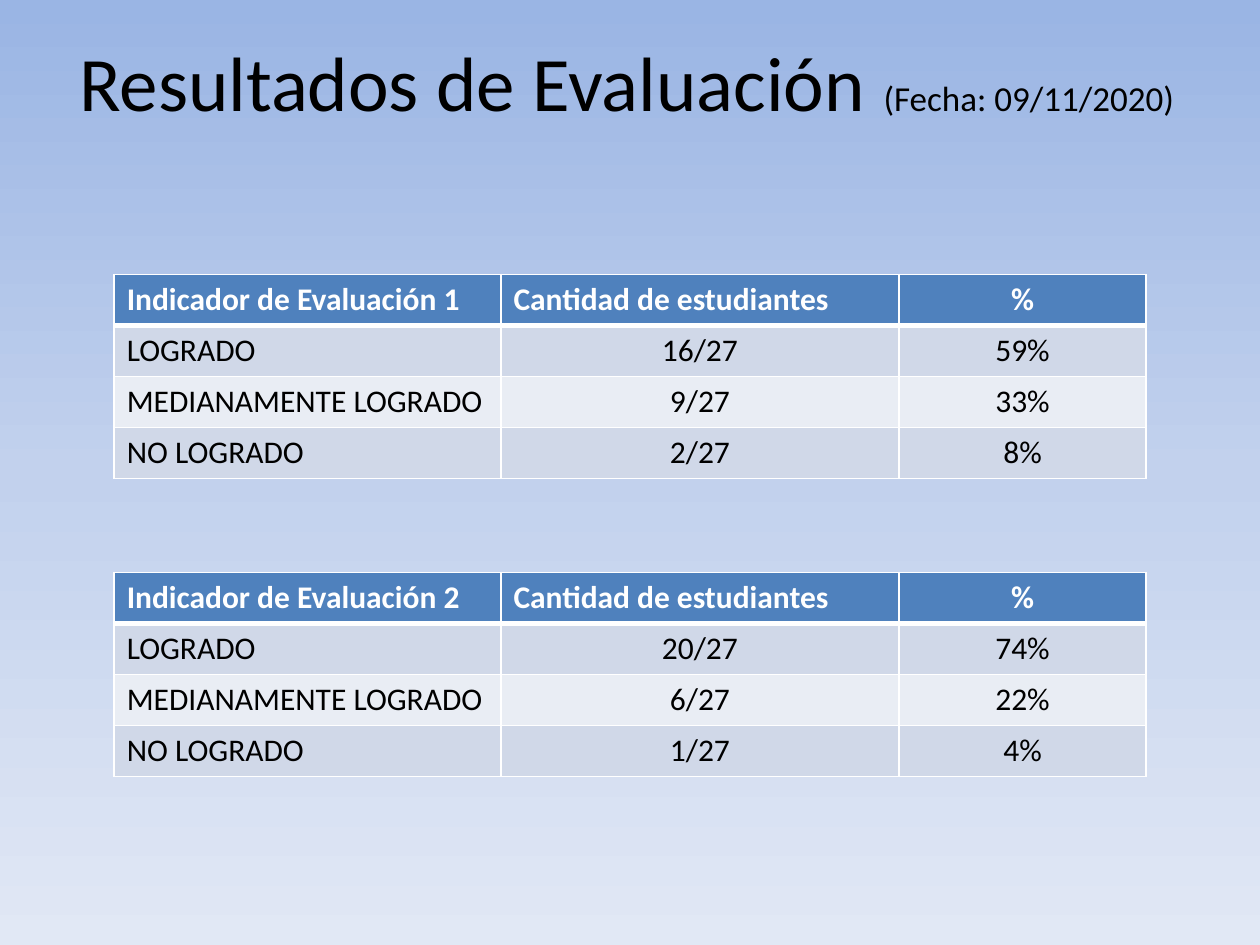
from dataclasses import dataclass

from lxml.etree import SubElement
from pptx import Presentation
from pptx.dml.color import RGBColor as Color
from pptx.enum.text import MSO_ANCHOR as Anchor, PP_ALIGN as Align
from pptx.oxml.ns import qn
from pptx.util import Pt


@dataclass(frozen=True)
class Theme:
    font: str = "Calibri"
    background: tuple = ((0, "9AB5E4"), (50, "C2D1ED"), (100, "E1E8F5"))
    text: str = "000000"
    light: str = "FFFFFF"
    header: str = "4F81BD"
    bands: tuple = ("D0D8E8", "E9EDF4")
    title_size: int = 44
    date_size: int = 20
    table_size: int = 18
    thin_border: int = 1
    thick_border: int = 3


class SlideBuilder:
    """Draw styled elements on one slide, with lengths in points."""

    def __init__(self, slide, theme):
        self.slide = slide
        self.theme = theme

    def background(self):
        fill = self.slide.background.fill
        fill.gradient()
        fill.gradient_angle = 270
        stops = next(self.slide.element.iter(qn("a:gsLst")))
        for stop in list(stops):
            stops.remove(stop)
        for position, color in self.theme.background:
            stop = SubElement(stops, qn("a:gs"), pos=str(position * 1000))
            SubElement(stop, qn("a:srgbClr"), val=color)

    def format_run(self, run, size, color, bold=False):
        run.font.name = self.theme.font
        run.font.size = Pt(size)
        run.font.bold = bold
        run.font.color.rgb = Color.from_string(color)

    def title(self, left, top, width, height, parts):
        shape = self.slide.shapes.add_textbox(Pt(left), Pt(top), Pt(width), Pt(height))
        text_frame = shape.text_frame
        text_frame.word_wrap = True
        text_frame.vertical_anchor = Anchor.MIDDLE
        paragraph = text_frame.paragraphs[0]
        paragraph.alignment = Align.CENTER
        for text, size in parts:
            run = paragraph.add_run()
            run.text = text
            self.format_run(run, size, self.theme.text)

    def borders(self, cell, top, bottom):
        properties = cell._tc.get_or_add_tcPr()
        thin = self.theme.thin_border
        for side, width in (("L", thin), ("R", thin), ("T", top), ("B", bottom)):
            line = SubElement(properties, qn(f"a:ln{side}"), w=str(Pt(width)))
            fill = SubElement(line, qn("a:solidFill"))
            SubElement(fill, qn("a:srgbClr"), val=self.theme.light)

    def cell(self, cell, text, row, column):
        theme = self.theme
        is_header = row == 0
        self.borders(
            cell,
            theme.thick_border if row == 1 else theme.thin_border,
            theme.thick_border if is_header else theme.thin_border,
        )
        cell.fill.solid()
        background = theme.header if is_header else theme.bands[(row - 1) % 2]
        cell.fill.fore_color.rgb = Color.from_string(background)
        cell.text_frame.text = text
        paragraph = cell.text_frame.paragraphs[0]
        is_left = column == 0 or (is_header and column == 1)
        paragraph.alignment = Align.LEFT if is_left else Align.CENTER
        color = theme.light if is_header else theme.text
        self.format_run(paragraph.runs[0], theme.table_size, color, is_header)

    def table(self, left, top, column_widths, row_height, rows):
        table = self.slide.shapes.add_table(
            len(rows), len(column_widths), Pt(left), Pt(top),
            Pt(sum(column_widths)), Pt(row_height * len(rows)),
        ).table
        for column, width in zip(table.columns, column_widths):
            column.width = Pt(width)
        for row_index, values in enumerate(rows):
            table.rows[row_index].height = Pt(row_height)
            for column_index, text in enumerate(values):
                cell = table.cell(row_index, column_index)
                self.cell(cell, text, row_index, column_index)


def main():
    presentation = Presentation()
    presentation.slide_width, presentation.slide_height = Pt(720), Pt(540)
    slide = presentation.slides.add_slide(presentation.slide_layouts[6])
    theme = Theme()
    builder = SlideBuilder(slide, theme)
    builder.background()
    builder.title(36.5, 9.5, 648, 73.5, (
        ("Resultados de Evaluación ", theme.title_size),
        ("(Fecha: 09/11/2020) ", theme.date_size),
    ))

    levels = ("LOGRADO", "MEDIANAMENTE LOGRADO", "NO LOGRADO")
    indicators = (
        (156.75, ("16/27", "9/27", "2/27"), ("59%", "33%", "8%")),
        (327, ("20/27", "6/27", "1/27"), ("74%", "22%", "4%")),
    )
    for number, (top, counts, percentages) in enumerate(indicators, start=1):
        header = (f"Indicador de Evaluación {number}", "Cantidad de estudiantes", "%")
        rows = [header, *zip(levels, counts, percentages)]
        builder.table(65.25, top, (221, 227.5, 141.25), 29.2, rows)

    presentation.save("out.pptx")


if __name__ == "__main__":
    main()
